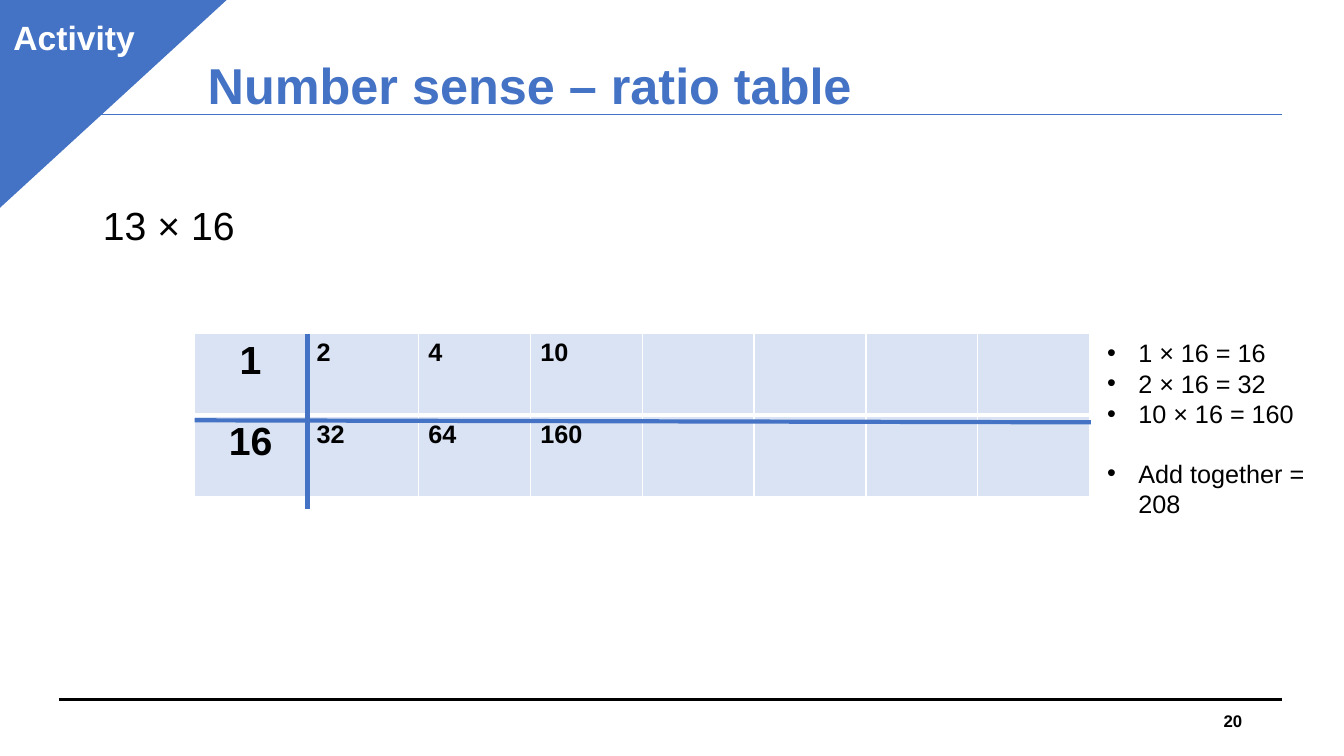
"""Builds the ratio table slide for 13 × 16."""
from dataclasses import dataclass

import pptx
import pptx.dml.color
import pptx.enum.shapes
import pptx.enum.text
import pptx.oxml
import pptx.oxml.ns
import pptx.util
from pptx.dml.color import RGBColor

EMU_PER_PX = 9144
FONT = "Arial"
BLUE = RGBColor(0x44, 0x72, 0xC4)
PALE_BLUE = RGBColor(0xDA, 0xE3, 0xF3)
BLACK = RGBColor(0, 0, 0)
WHITE = RGBColor(0xFF, 0xFF, 0xFF)

ALIGN = pptx.enum.text.PP_ALIGN
ANCHOR = pptx.enum.text.MSO_ANCHOR
SHAPES = pptx.enum.shapes.MSO_SHAPE
COLUMN_WIDTH, ROW_HEIGHT = 111, 81
RATIO_ROWS = (("1", "2", "4", "10"), ("16", "32", "64", "160"))
COLUMN_COUNT = 8
STEPS = ("1 × 16 = 16", "2 × 16 = 32", "10 × 16 = 160", "Add together = 208")


@dataclass(frozen=True)
class Box:
    left: int
    top: int
    width: int
    height: int

    def emu(self) -> tuple[int, ...]:
        return tuple(px(n) for n in (self.left, self.top, self.width, self.height))


@dataclass(frozen=True)
class Rule:
    start: tuple[int, int]
    end: tuple[int, int]
    color: RGBColor
    points: float


@dataclass(frozen=True)
class TextStyle:
    size: int
    color: RGBColor = BLACK
    bold: bool = False
    align: ALIGN = ALIGN.LEFT
    line_spacing: float = 1.0
    space_before: int = 0


RULES = (
    Rule((59, 694), (1272, 694), BLACK, 1.5),
    Rule((59, 114), (1272, 114), BLUE, 0.75),
)
TABLE_RULES = (
    Rule((193, 417), (1082, 419), BLUE, 3),
    Rule((305, 331), (305, 505), BLUE, 3),
)


def px(length: int) -> int:
    return pptx.util.Emu(length * EMU_PER_PX)


def style_paragraph(paragraph, style: TextStyle) -> None:
    paragraph.alignment = style.align
    paragraph.line_spacing = style.line_spacing
    paragraph.space_before = pptx.util.Pt(style.space_before)
    paragraph.font.name = FONT
    paragraph.font.size = pptx.util.Pt(style.size)
    paragraph.font.bold = style.bold
    paragraph.font.color.rgb = style.color


def write(shape, lines: tuple[str, ...], style: TextStyle, anchor: ANCHOR) -> None:
    frame = shape.text_frame
    frame.text = "\n".join(lines)
    frame.word_wrap = True
    frame.auto_size = pptx.enum.text.MSO_AUTO_SIZE.NONE
    frame.vertical_anchor = anchor
    for paragraph in frame.paragraphs:
        style_paragraph(paragraph, style)


def place(shape, box: Box) -> None:
    shape.left, shape.top, shape.width, shape.height = box.emu()


def set_bullet(paragraph, indent: int, bullet: str = "") -> None:
    properties = paragraph._p.get_or_add_pPr()
    properties.set("marL", str(px(indent)))
    properties.set("indent", str(px(-indent)))
    if bullet:
        mark = pptx.oxml.ns.qn("a:buChar")
        properties.makeelement(mark)
        child = properties.makeelement(mark, {"char": bullet})
    else:
        child = properties.makeelement(pptx.oxml.ns.qn("a:buNone"))
    properties.append(child)


def draw_rule(slide, rule: Rule) -> None:
    line = slide.shapes.add_connector(
        pptx.enum.shapes.MSO_CONNECTOR.STRAIGHT,
        *(px(n) for n in rule.start + rule.end),
    )
    line.line.color.rgb = rule.color
    line.line.width = pptx.util.Pt(rule.points)
    properties = line._element.spPr
    properties.append(properties.makeelement(pptx.oxml.ns.qn("a:effectLst")))


def draw_shape(slide, kind: SHAPES, box: Box, border: float):
    shape = slide.shapes.add_shape(kind, *box.emu())
    shape.shadow.inherit = False
    shape.fill.solid()
    shape.fill.fore_color.rgb = BLUE
    shape.line.color.rgb = BLUE
    shape.line.width = pptx.util.Pt(border)
    return shape


def set_borders(cell, widths: dict[str, int]) -> None:
    properties = cell._tc.get_or_add_tcPr()
    for position, (side, points) in enumerate(widths.items()):
        properties.insert(position, pptx.oxml.parse_xml(
            f'<a:{side} {pptx.oxml.ns.nsdecls("a")} w="{pptx.util.Pt(points)}">'
            f'<a:solidFill><a:srgbClr val="{WHITE}"/></a:solidFill></a:{side}>'
        ))


def draw_ratio_table(slide) -> None:
    box = Box(193, 331, COLUMN_COUNT * COLUMN_WIDTH, len(RATIO_ROWS) * ROW_HEIGHT)
    table = slide.shapes.add_table(len(RATIO_ROWS), COLUMN_COUNT, *box.emu()).table
    table.first_row = table.horz_banding = False
    for column in table.columns:
        column.width = px(COLUMN_WIDTH)
    for row_index, values in enumerate(RATIO_ROWS):
        table.rows[row_index].height = px(ROW_HEIGHT)
        top, bottom = (1, 3) if row_index == 0 else (3, 1)
        for column_index in range(COLUMN_COUNT):
            cell = table.cell(row_index, column_index)
            cell.fill.solid()
            cell.fill.fore_color.rgb = PALE_BLUE
            set_borders(cell, {"lnL": 1, "lnR": 1, "lnT": top, "lnB": bottom})
            if column_index < len(values):
                cell.text = values[column_index]
                style = (TextStyle(28, bold=True, align=ALIGN.CENTER)
                         if column_index == 0 else TextStyle(18, bold=True))
                style_paragraph(cell.text_frame.paragraphs[0], style)


def main() -> None:
    deck = pptx.Presentation()
    deck.slide_width, deck.slide_height = px(1333), px(750)
    slide = deck.slides.add_slide(deck.slide_layouts.get_by_name("Two Content"))
    title, problem, steps = slide.placeholders

    for rule in RULES:
        draw_rule(slide, rule)

    place(title, Box(196, 15, 1100, 145))
    write(title, ("Number sense – ratio table",),
          TextStyle(36, BLUE, bold=True, line_spacing=0.9), ANCHOR.MIDDLE)

    place(problem, Box(92, 200, 1150, 476))
    write(problem, ("13 × 16",),
          TextStyle(28, line_spacing=0.9, space_before=10), ANCHOR.TOP)
    set_bullet(problem.text_frame.paragraphs[0], 0)

    page_number = slide.shapes.add_textbox(*Box(942, 695, 300, 40).emu())
    write(page_number, ("20",), TextStyle(12, bold=True, align=ALIGN.RIGHT), ANCHOR.MIDDLE)

    corner = draw_shape(slide, SHAPES.ISOSCELES_TRIANGLE, Box(-3, -2, 229, 210), 1)
    corner.adjustments[0] = 0
    corner._element.spPr.find(pptx.oxml.ns.qn("a:xfrm")).set("flipV", "1")

    draw_ratio_table(slide)
    for rule in TABLE_RULES:
        draw_rule(slide, rule)

    activity = draw_shape(slide, SHAPES.RECTANGLE, Box(1, 12, 145, 50), 0.75)
    write(activity, ("Activity",),
          TextStyle(24, WHITE, bold=True, align=ALIGN.CENTER), ANCHOR.TOP)

    place(steps, Box(1088, 330, 225, 192))
    write(steps, STEPS, TextStyle(18), ANCHOR.TOP)
    for paragraph in steps.text_frame.paragraphs:
        set_bullet(paragraph, 31, "•")
    steps.text_frame.paragraphs[-1].space_before = pptx.util.Pt(21)

    deck.save("out.pptx")


if __name__ == "__main__":
    main()
